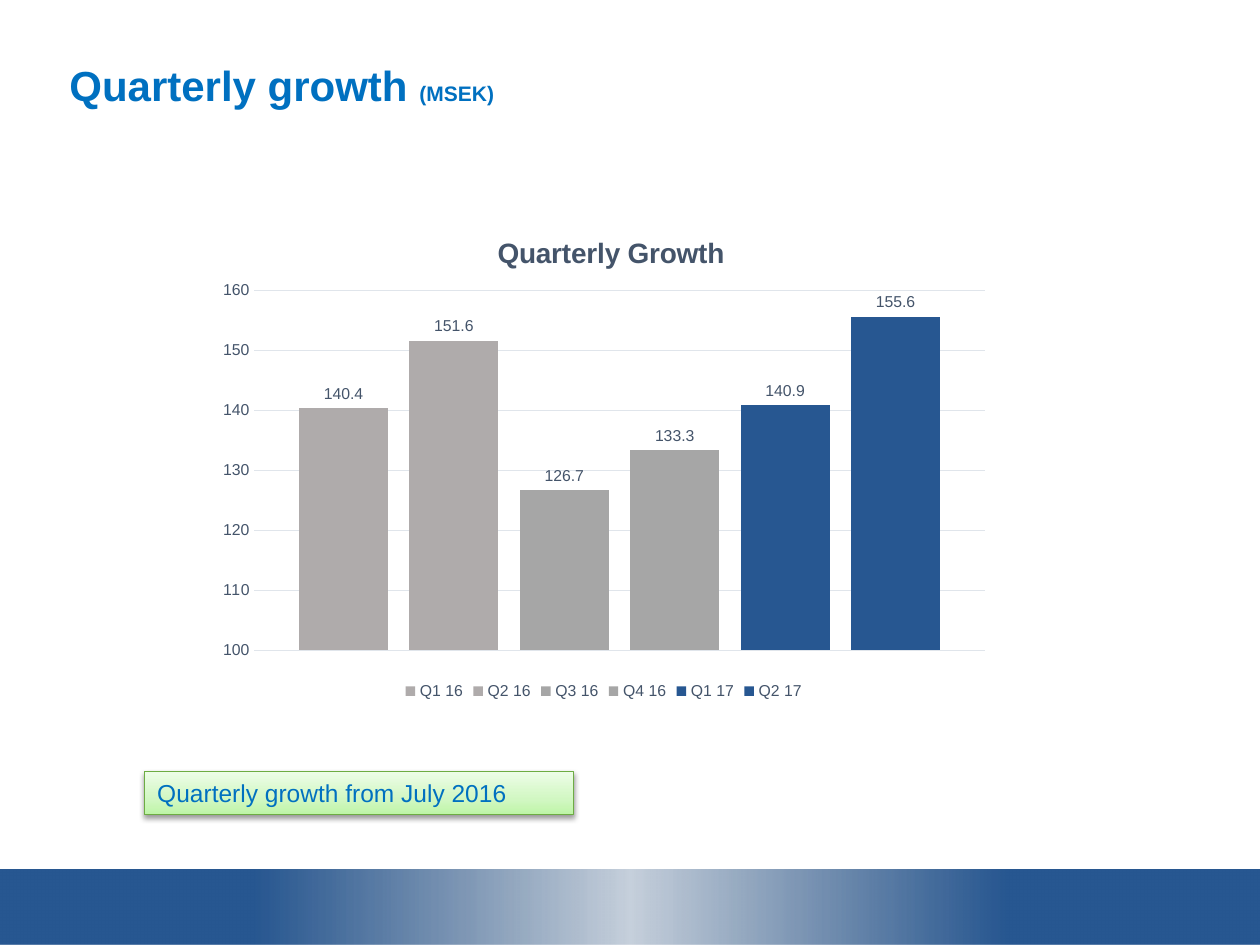
from lxml.etree import SubElement
from pptx import Presentation
from pptx.chart.data import CategoryChartData
from pptx.dml.color import RGBColor
from pptx.enum.chart import XL_CHART_TYPE, XL_LABEL_POSITION, XL_LEGEND_POSITION, XL_TICK_MARK
from pptx.enum.shapes import MSO_SHAPE
from pptx.enum.text import MSO_ANCHOR, PP_ALIGN
from pptx.oxml import parse_xml
from pptx.oxml.ns import nsdecls, qn
from pptx.util import Cm, Pt

BLUE = "0070C0"
NAVY = "275791"
SLATE = "44546A"
WARM_GREY = "AFABAB"
GREY = "A6A6A6"
QUARTERS = [
    ("Q1 16", 140.4, WARM_GREY),
    ("Q2 16", 151.6, WARM_GREY),
    ("Q3 16", 126.7, GREY),
    ("Q4 16", 133.3, GREY),
    ("Q1 17", 140.9, NAVY),
    ("Q2 17", 155.6, NAVY),
]


def color(value):
    return RGBColor.from_string(value)


def format_font(font, size, value, bold=False):
    font.name = "Arial"
    font.size = Pt(size)
    font.bold = bold
    font.color.rgb = color(value)


def add_text(paragraph, text, size=14, value=BLUE, bold=False):
    run = paragraph.add_run()
    run.text = text
    format_font(run.font, size, value, bold)


def set_gradient(shape, stops, angle):
    shape.fill.gradient()
    shape.fill.gradient_angle = angle
    stop_list = shape.fill._fill._gradFill.find(qn("a:gsLst"))
    for stop in list(stop_list):
        stop_list.remove(stop)
    for position, value, opacity in stops:
        stop = SubElement(stop_list, qn("a:gs"), pos=str(position * 1000))
        shade = SubElement(stop, qn("a:srgbClr"), val=value)
        if opacity < 100:
            SubElement(shade, qn("a:alpha"), val=str(opacity * 1000))


def set_layout(parent, **fractions):
    for old in parent.findall(qn("c:layout")):
        parent.remove(old)
    target = '<c:layoutTarget val="inner"/>' if "w" in fractions else ""
    modes = "".join(f'<c:{key}Mode val="edge"/>' for key in "xy")
    values = "".join(f'<c:{key} val="{value}"/>' for key, value in fractions.items())
    layout = parse_xml(
        f'<c:layout {nsdecls("c")}><c:manualLayout>{target}{modes}{values}'
        "</c:manualLayout></c:layout>"
    )
    text = parent.find(qn("c:tx"))
    parent.insert(0 if text is None else 1, layout)


class SlideBuilder:
    def __init__(self, slide):
        self.slide = slide

    def rectangle(self, left, top, width, height, stops, angle=0):
        shape = self.slide.shapes.add_shape(
            MSO_SHAPE.RECTANGLE, Cm(left), Cm(top), Cm(width), Cm(height)
        )
        shape.shadow.inherit = False
        shape.line.fill.background()
        set_gradient(shape, stops, angle)
        return shape

    def title(self, left, top, width, height, heading, unit):
        box = self.slide.shapes.add_textbox(Cm(left), Cm(top), Cm(width), Cm(height))
        frame = box.text_frame
        frame.word_wrap = True
        frame.margin_left = frame.margin_right = 0
        frame.margin_top = frame.margin_bottom = 0
        paragraph = frame.paragraphs[0]
        paragraph.line_spacing = 0.9
        add_text(paragraph, heading, size=24, bold=True)
        add_text(paragraph, unit, size=12, bold=True)

    def callout(self, left, top, width, height, text):
        stops = [(0, "BEF5A7", 100), (35, "D1F7C2", 100), (100, "EDFDE7", 100)]
        shape = self.rectangle(left, top, width, height, stops, angle=90)
        shape.line.color.rgb = color("6DAC43")
        shape.line.width = Pt(0.75)
        effects = shape._element.spPr.find(qn("a:effectLst"))
        shadow = SubElement(
            effects, qn("a:outerShdw"), blurRad=str(Pt(3.1)), dist=str(Pt(1.6)),
            dir="5400000", rotWithShape="0",
        )
        shade = SubElement(shadow, qn("a:srgbClr"), val="000000")
        SubElement(shade, qn("a:alpha"), val="38000")
        frame = shape.text_frame
        frame.word_wrap = True
        frame.vertical_anchor = MSO_ANCHOR.MIDDLE
        frame.paragraphs[0].alignment = PP_ALIGN.LEFT
        add_text(frame.paragraphs[0], text)

    def column_chart(self, left, top, width, height, heading, quarters):
        data = CategoryChartData()
        data.categories = ["1"]
        for name, amount, _ in quarters:
            data.add_series(name, [amount])
        chart = self.slide.shapes.add_chart(
            XL_CHART_TYPE.COLUMN_CLUSTERED, Cm(left), Cm(top), Cm(width), Cm(height), data
        ).chart
        format_font(chart.font, 10, "000000")
        add_text(chart.chart_title.text_frame.paragraphs[0], heading, 16, SLATE, True)
        set_layout(chart.chart_title._element, x=0.36, y=0.05)
        chart.has_legend = True
        chart.legend.position = XL_LEGEND_POSITION.BOTTOM
        chart.legend.include_in_layout = False
        format_font(chart.legend.font, 9, SLATE)
        self.format_axes(chart)
        plot = chart.plots[0]
        plot.vary_by_categories = False
        plot.gap_width = 100
        plot.overlap = -24
        for series, (_, _, value) in zip(plot.series, quarters):
            series.format.fill.solid()
            series.format.fill.fore_color.rgb = color(value)
            labels = series.data_labels
            labels.show_value = True
            labels.position = XL_LABEL_POSITION.OUTSIDE_END
            format_font(labels.font, 9, SLATE)
        plot_area = chart._chartSpace.chart.plotArea
        set_layout(plot_area, x=0.06, y=0.17, w=0.92, h=0.72)

    def format_axes(self, chart):
        chart.category_axis.visible = False
        axis = chart.value_axis
        axis.minimum_scale = 100
        axis.maximum_scale = 160
        axis.major_unit = 10
        axis.major_tick_mark = XL_TICK_MARK.NONE
        axis.format.line.fill.background()
        format_font(axis.tick_labels.font, 9, SLATE)
        grid = axis.major_gridlines.format.line
        grid.color.rgb = color("E0E5EB")
        grid.width = Pt(0.75)


def main():
    presentation = Presentation()
    presentation.slide_width = Cm(25.4)
    presentation.slide_height = Cm(19.05)
    builder = SlideBuilder(presentation.slides.add_slide(presentation.slide_layouts[6]))
    band = [(position, NAVY, 100) for position in (0, 20, 80, 100)]
    band.insert(2, (50, "1F4674", 25))
    builder.rectangle(0, 17.52, 25.4, 1.53, band)
    builder.title(1.4, 1.32, 22.58, 1.6, "Quarterly growth ", "(MSEK)")
    builder.callout(2.92, 15.56, 8.64, 0.86, "Quarterly growth from July 2016")
    builder.column_chart(4.17, 4.14, 16, 10.08, "Quarterly Growth", QUARTERS)
    presentation.save("out.pptx")


if __name__ == "__main__":
    main()
